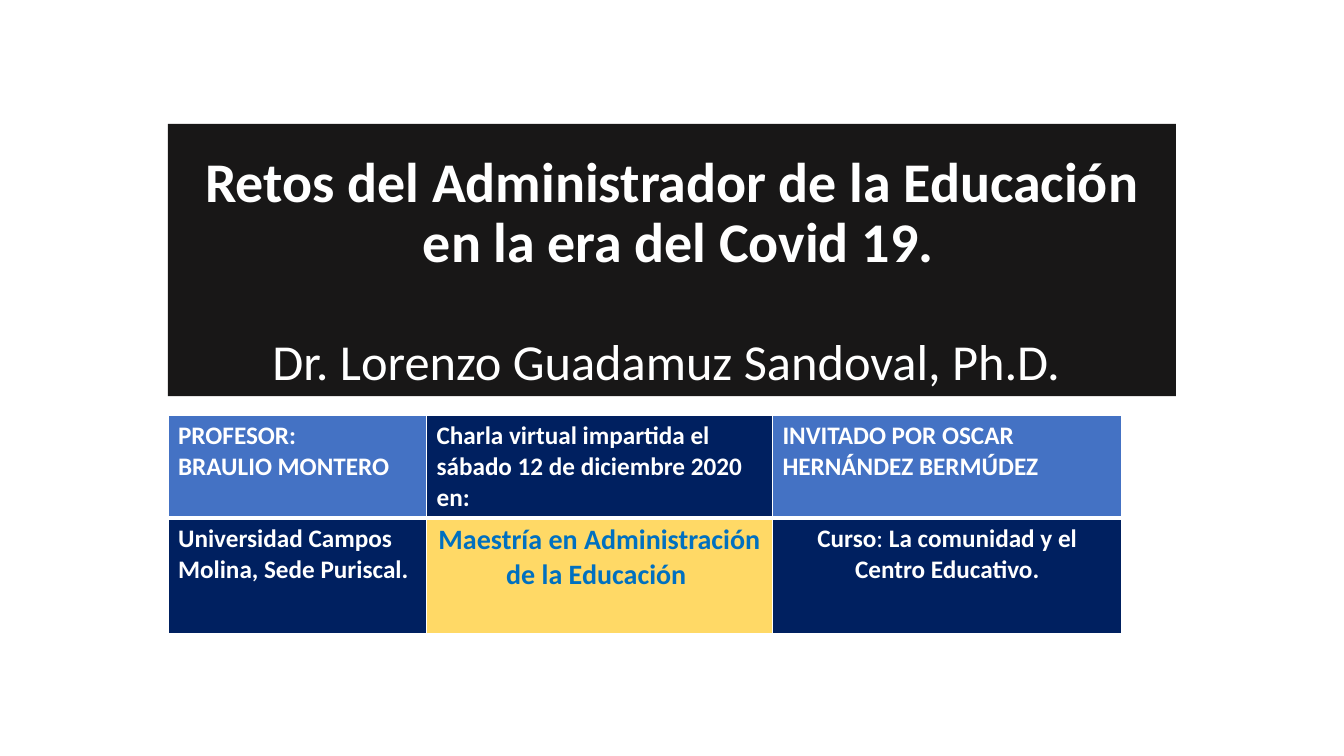
from lxml import etree
from pptx import Presentation
from pptx import util as u
from pptx.dml.color import RGBColor
from pptx.enum import shapes, text
from pptx.oxml.ns import qn

WHITE = RGBColor(0xFF, 0xFF, 0xFF)
BLACK = RGBColor(0x18, 0x17, 0x17)
BLUE = RGBColor(0x44, 0x72, 0xC4)
NAVY = RGBColor(0x00, 0x20, 0x60)
GOLD = RGBColor(0xFF, 0xD9, 0x66)
SKY = RGBColor(0x00, 0x70, 0xC0)
LEFT, CENTER = text.PP_ALIGN.LEFT, text.PP_ALIGN.CENTER


class SlideBuilder:
    """Holds the style and the current slide; lengths are shares of its size."""

    font = "Calibri"

    def __init__(self, deck):
        self.deck = deck
        self.page = deck.slides.add_slide(deck.slide_layouts[6])

    def area(self, left, top, width, height):
        wide, high = self.deck.slide_width, self.deck.slide_height
        return [round(share * side) for share, side in
                zip((left, top, width, height), (wide, high, wide, high))]

    def add_span(self, para, words, size, color=WHITE, bold=True):
        span = para.add_run()
        span.text = words
        span.font.name = self.font
        span.font.size = u.Pt(size)
        span.font.bold = bold
        span.font.color.rgb = color

    def panel(self, area, fill):
        box = self.page.shapes.add_shape(
            shapes.MSO_SHAPE.RECTANGLE, *self.area(*area))
        box.shadow.inherit = False
        box.fill.solid()
        box.fill.fore_color.rgb = fill
        box.line.fill.background()
        box.text_frame.word_wrap = True
        box.text_frame.vertical_anchor = text.MSO_ANCHOR.BOTTOM
        return box.text_frame

    def borders(self, cell, widths):
        properties = cell._tc.get_or_add_tcPr()
        for position, (side, width) in enumerate(zip("LRTB", widths)):
            line = etree.Element(qn(f"a:ln{side}"), w=str(int(u.Pt(width))))
            fill = etree.SubElement(line, qn("a:solidFill"))
            etree.SubElement(fill, qn("a:srgbClr"), val=str(WHITE))
            properties.insert(position, line)

    def table(self, area, columns, rows, cells):
        frame = self.page.shapes.add_table(
            len(rows), len(columns), *self.area(*area))
        grid = frame.table
        for column, share in zip(grid.columns, columns):
            column.width = round(frame.width * share / sum(columns))
        for row, share in zip(grid.rows, rows):
            row.height = round(frame.height * share / sum(rows))
        for r, row in enumerate(cells):
            for c, (fill, align, size, color, lines) in enumerate(row):
                cell = grid.cell(r, c)
                cell.fill.solid()
                cell.fill.fore_color.rgb = fill
                self.borders(cell, (1, 1, 1, 3) if r == 0 else (1, 1, 3, 1))
                body = cell.text_frame
                for i, spans in enumerate(lines):
                    para = body.add_paragraph() if i else body.paragraphs[0]
                    para.alignment = align
                    for words, bold in spans:
                        self.add_span(para, words, size, color, bold)


def main():
    deck = Presentation()
    deck.slide_width, deck.slide_height = u.Inches(13.33), u.Inches(7.5)
    builder = SlideBuilder(deck)

    # Title and speaker
    title = builder.panel((1 / 8, 0.164, 3 / 4, 0.36), BLACK)
    heading, speaker = title.paragraphs[0], title.add_paragraph()
    for para in (heading, speaker):
        para.alignment = CENTER
        para.line_spacing = 0.9
    builder.add_span(heading, "Retos del Administrador de la Educación", 40)
    heading.add_line_break()
    builder.add_span(heading, " en la era del Covid 19.", 40)
    speaker.space_before = u.Pt(44)
    builder.add_span(speaker, "Dr. Lorenzo Guadamuz Sandoval, Ph.D. ", 36, bold=False)

    # Event details: fill, alignment, size, colour, lines of (words, bold)
    builder.table((1 / 8, 0.55, 3 / 4, 0.285), (2.56, 3.71, 3.71), (0.88, 1.26), [
        [(BLUE, LEFT, 18, WHITE, [[("PROFESOR:", True)], [("BRAULIO MONTERO", True)]]),
         (NAVY, LEFT, 18, WHITE,
          [[("Charla virtual impartida el sábado 12 de diciembre 2020  en:", True)]]),
         (BLUE, LEFT, 18, WHITE, [[("INVITADO POR OSCAR HERNÁNDEZ BERMÚDEZ", True)]])],
        [(NAVY, LEFT, 18, WHITE, [[("Universidad Campos Molina, Sede Puriscal.", True)]]),
         (GOLD, CENTER, 20, SKY, [[("Maestría en Administración de la Educación ", True)]]),
         (NAVY, CENTER, 18, WHITE,
          [[("Curso", True), (": ", False),
            ("La comunidad y el Centro Educativo.", True)]])],
    ])

    deck.save("out.pptx")


if __name__ == "__main__":
    main()
